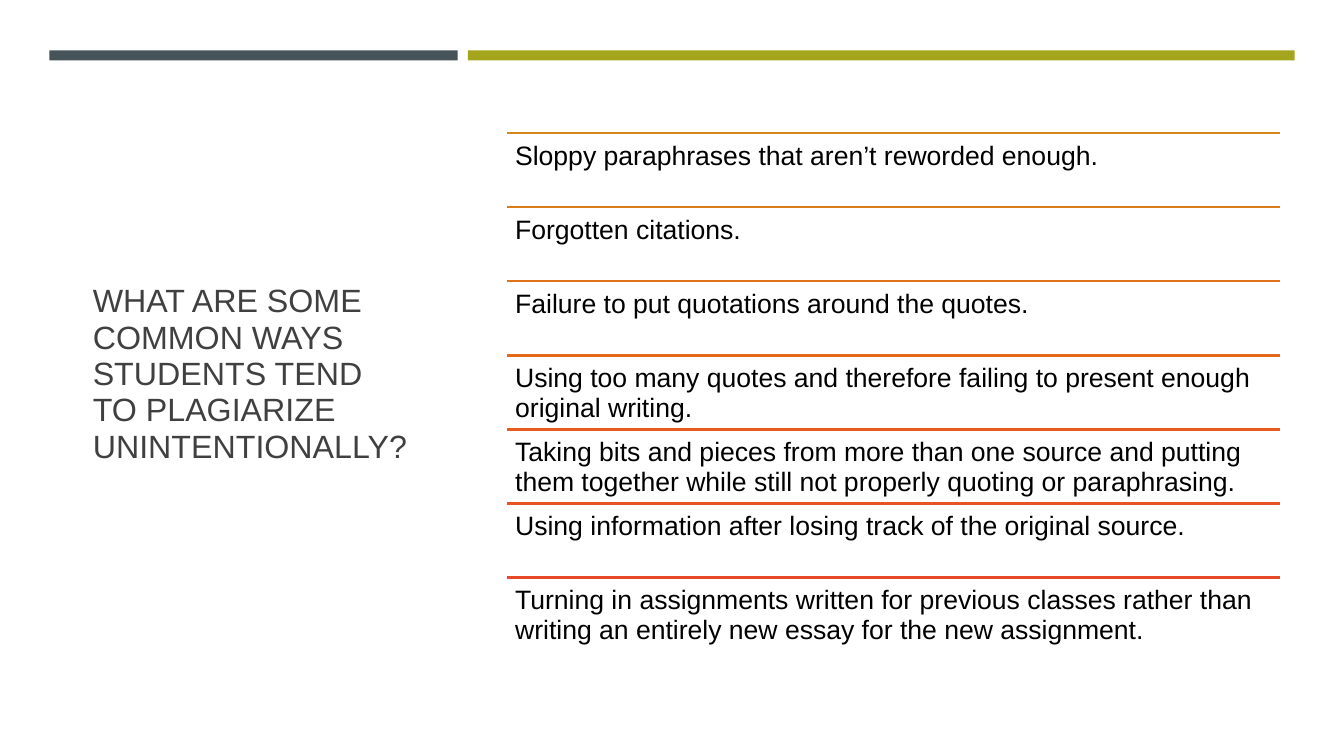
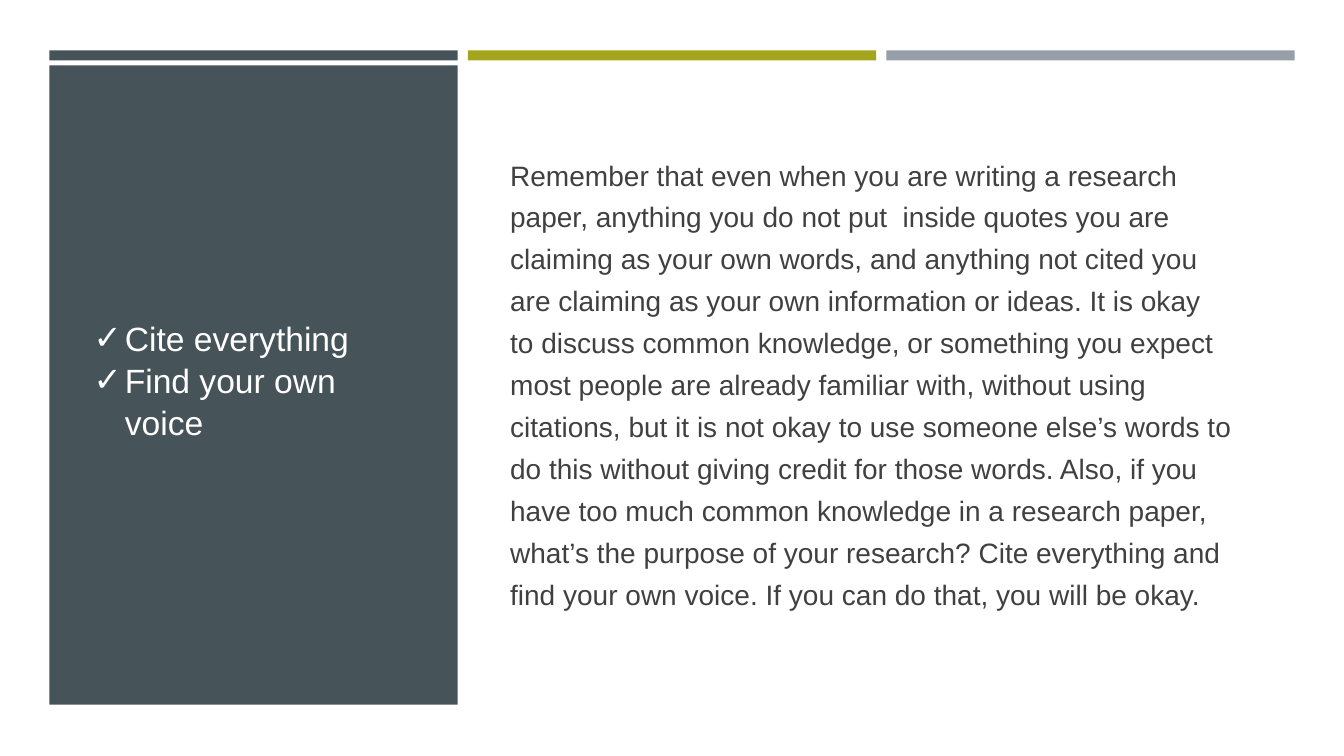
from dataclasses import dataclass

from lxml import etree
from pptx import Presentation
from pptx.dml.color import RGBColor
from pptx.enum.shapes import MSO_CONNECTOR, MSO_SHAPE
from pptx.enum.text import MSO_ANCHOR, MSO_AUTO_SIZE, PP_ALIGN
from pptx.oxml.ns import qn
from pptx.util import Inches, Pt

RECTANGLE = MSO_SHAPE.RECTANGLE
STRAIGHT = MSO_CONNECTOR.STRAIGHT
TOP = MSO_ANCHOR.TOP
MIDDLE = MSO_ANCHOR.MIDDLE
NO_AUTOFIT = MSO_AUTO_SIZE.NONE
LEFT = PP_ALIGN.LEFT


@dataclass(frozen=True)
class Theme:
    font: str = "Arial"
    slate: str = "465359"
    olive: str = "A4A51D"
    gray: str = "969FA7"
    body: str = "404040"
    black: str = "000000"
    white: str = "FFFFFF"
    rules: tuple = ("D58717", "DA7D18", "E07218", "E56719", "E65C1E", "E75323", "E74A29")
    title_size: int = 23
    row_size: int = 19
    body_size: int = 20
    checklist_size: int = 24


theme = Theme()


def write_text(shape, *lines, size, color, anchor=TOP, inset=None, spacing=1.0,
               before=0, after=0, bullet=None, indent=0):
    frame = shape.text_frame
    frame.word_wrap = True
    frame.auto_size = NO_AUTOFIT
    frame.vertical_anchor = anchor
    if inset is not None:
        frame.margin_left = frame.margin_right = Inches(inset)
        frame.margin_top = frame.margin_bottom = Inches(inset)
    for index, line in enumerate(lines):
        paragraph = frame.add_paragraph() if index else frame.paragraphs[0]
        paragraph.alignment = LEFT
        paragraph.line_spacing = spacing
        paragraph.space_before = Pt(before)
        paragraph.space_after = Pt(after)
        run = paragraph.add_run()
        run.text = line
        run.font.name = theme.font
        run.font.size = Pt(size)
        run.font.color.rgb = RGBColor.from_string(color)
        properties = paragraph._p.get_or_add_pPr()
        properties.set("marL", str(Inches(indent)))
        properties.set("indent", str(-Inches(indent)))
        if bullet:
            etree.SubElement(properties, qn("a:buFont")).set("typeface", theme.font)
            etree.SubElement(properties, qn("a:buChar")).set("char", bullet)
        else:
            etree.SubElement(properties, qn("a:buNone"))


def place(shape, left, top, width, height):
    shape.left, shape.top = Inches(left), Inches(top)
    shape.width, shape.height = Inches(width), Inches(height)


presentation = Presentation()
presentation.slide_width = Inches(13.33)
presentation.slide_height = Inches(7.5)
layouts = presentation.slide_layouts
ways_slide = presentation.slides.add_slide(layouts.get_by_name("Title Only"))
advice_slide = presentation.slides.add_slide(layouts.get_by_name("Title and Content"))

margin, band_top, band_height = 0.49, 0.5, 0.1
column_width, column_pitch = 4.05, 4.15
second_column = margin + column_pitch
third_column = second_column + column_pitch

bands = [
    (ways_slide, margin, band_top, column_width, band_height, theme.slate),
    (ways_slide, second_column, band_top, column_pitch + column_width, band_height, theme.olive),
    (advice_slide, margin, band_top, column_width, band_height, theme.slate),
    (advice_slide, second_column, band_top, column_width, band_height, theme.olive),
    (advice_slide, third_column, band_top, column_width, band_height, theme.gray),
    (advice_slide, margin, 0.65, column_width, 6.34, theme.slate),
]
for slide, left, top, width, height, color in bands:
    band = slide.shapes.add_shape(
        RECTANGLE, Inches(left), Inches(top), Inches(width), Inches(height))
    band.shadow.inherit = False
    band.fill.solid()
    band.fill.fore_color.rgb = RGBColor.from_string(color)
    band.line.fill.background()

title = ways_slide.shapes.title
place(title, 0.82, 1.14, 3.34, 5.15)
write_text(title, "WHAT ARE SOME COMMON WAYS STUDENTS TEND TO PLAGIARIZE UNINTENTIONALLY?",
           size=theme.title_size, color=theme.body, anchor=MIDDLE, spacing=0.94)

ways = [
    "Sloppy paraphrases that aren’t reworded enough.",
    "Forgotten citations.",
    "Failure to put quotations around the quotes.",
    "Using too many quotes and therefore failing to present enough original writing.",
    "Taking bits and pieces from more than one source and putting them together while "
    "still not properly quoting or paraphrasing.",
    "Using information after losing track of the original source.",
    "Turning in assignments written for previous classes rather than writing an entirely "
    "new essay for the new assignment.",
]
row_left, row_width = Inches(5.03), Inches(7.67)
first_row_top, row_height = Inches(1.32), Inches(0.735)
for index, (way, color) in enumerate(zip(ways, theme.rules)):
    row_top = first_row_top + index * row_height
    rule = ways_slide.shapes.add_connector(
        STRAIGHT, row_left, row_top, row_left + row_width, row_top)
    rule.line.color.rgb = RGBColor.from_string(color)
    rule.line.width = Pt(1.75)
    etree.SubElement(rule._element.spPr, qn("a:effectLst"))
    row = ways_slide.shapes.add_textbox(row_left, row_top, row_width, row_height)
    write_text(row, way, size=theme.row_size, color=theme.black, inset=0.08, spacing=0.94)

advice_title = advice_slide.shapes.title
advice_title._element.getparent().remove(advice_title._element)
advice = advice_slide.placeholders[1]
place(advice, 4.96, 1.14, 7.36, 5.27)
write_text(
    advice,
    "Remember that even when you are writing a research paper, anything you do not put  "
    "inside quotes you are claiming as your own words, and anything not cited you are "
    "claiming as your own information or ideas. It is okay to discuss common knowledge, or "
    "something you expect most people are already familiar with, without using citations, "
    "but it is not okay to use someone else’s words to do this without giving credit for "
    "those words. Also, if you have too much common knowledge in a research paper, what’s "
    "the purpose of your research? Cite everything and find your own voice. If you can do "
    "that, you will be okay.",
    size=theme.body_size, color=theme.body, anchor=MIDDLE, spacing=1.25, before=4, after=6)

checklist = advice_slide.shapes.add_textbox(
    Inches(0.83), Inches(3.09), Inches(3.36), Inches(1.3))
write_text(checklist, "Cite everything", "Find your own voice", size=theme.checklist_size,
           color=theme.white, spacing=1.04, bullet="✓", indent=0.31)

presentation.save("out.pptx")
